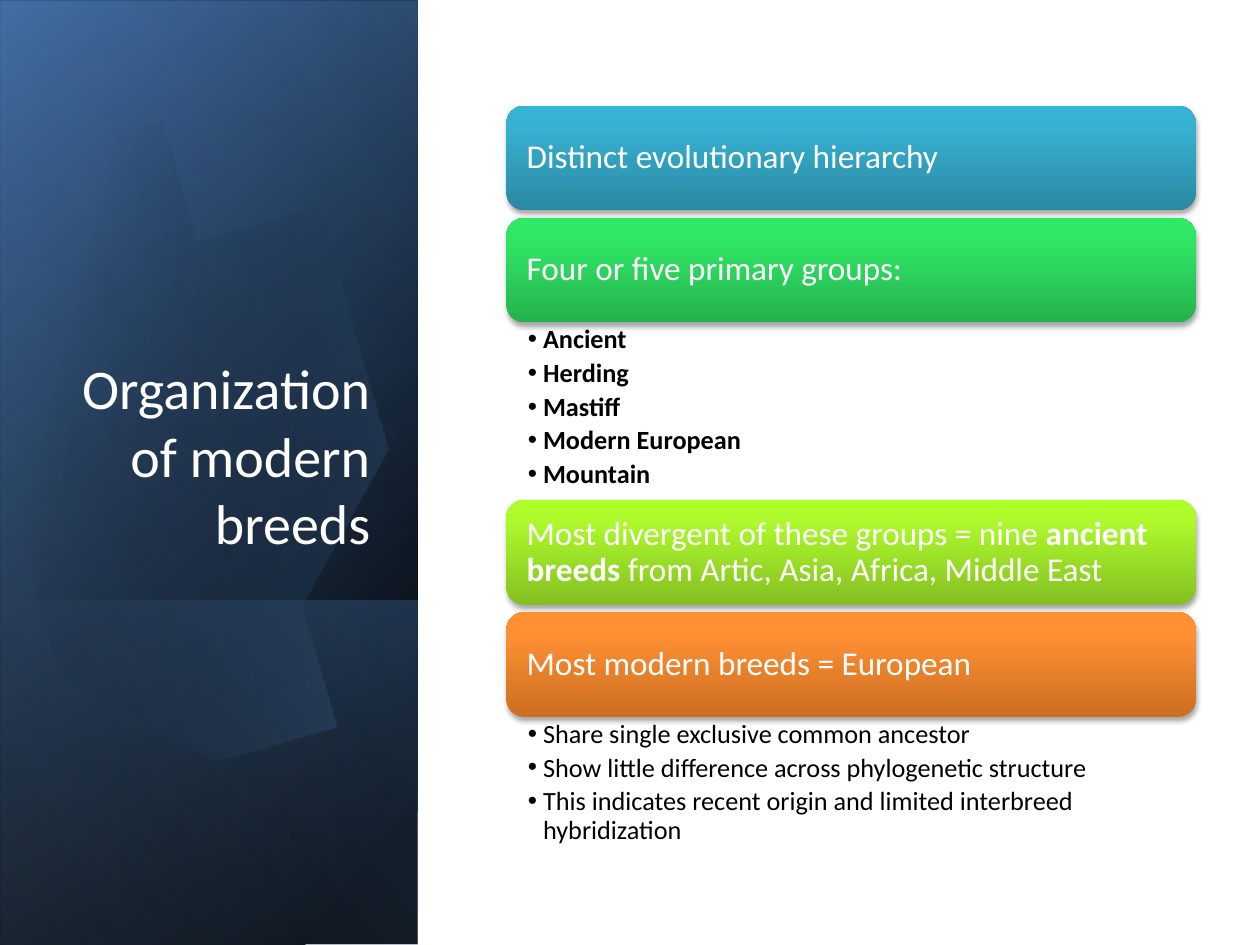
from dataclasses import dataclass
from math import cos, radians, sin

from lxml import etree
from pptx import Presentation
from pptx.dml.color import RGBColor
from pptx.enum.shapes import MSO_SHAPE
from pptx.enum.text import MSO_ANCHOR, MSO_AUTO_SIZE, PP_ALIGN
from pptx.oxml.ns import qn
from pptx.util import Inches, Pt

RECT, ROUND = MSO_SHAPE.RECTANGLE, MSO_SHAPE.ROUNDED_RECTANGLE
TOP, MIDDLE, BOTTOM = MSO_ANCHOR.TOP, MSO_ANCHOR.MIDDLE, MSO_ANCHOR.BOTTOM
LEFT, RIGHT = PP_ALIGN.LEFT, PP_ALIGN.RIGHT
NO_FIT = MSO_AUTO_SIZE.NONE


@dataclass(frozen=True)
class Theme:
    font: str = "Calibri"
    title: int = 32
    head: int = 19
    item: int = 15
    light: str = "FFFFFF"
    dark: str = "000000"
    navy: str = "376092"
    blue: str = "4F81BD"
    pale: str = "95B3D7"
    teal: tuple = ("2A88A2", "37B1D2", "34B4D6")
    green: tuple = ("25B24E", "30E765", "2DEB64")
    lime: tuple = ("85C022", "ADF92C", "AFFE28")
    orange: tuple = ("CC6E20", "FF9034", "FF9136")


def node(parent, tag, **attrs):
    return etree.SubElement(parent, qn(tag), {k: str(v) for k, v in attrs.items()})


def tint(parent, color, alpha):
    node(node(parent, "a:srgbClr", val=color), "a:alpha", val=alpha * 1000)


def shade(shape, stops, angle):
    """Fill with a gradient of (position, colour, opacity) stops, in percent."""
    shape.fill.gradient()
    grad = shape._element.spPr.find(qn("a:gradFill"))
    for child in list(grad):
        grad.remove(child)
    group = node(grad, "a:gsLst")
    for pos, color, alpha in stops:
        tint(node(group, "a:gs", pos=pos * 1000), color, alpha)
    node(grad, "a:lin", ang=angle * 60000, scaled=0)
    shape.line.fill.background()
    shape.shadow.inherit = False


def write(frame, paras, *, font, size, color, bold=False, align=LEFT,
          anchor=TOP, inset=(0.1, 0.05, 0.1, 0.05), lead=1.0, after=0, hang=0):
    """Write paragraphs, each a string or a list of (text, bold) runs."""
    frame.word_wrap = True
    frame.auto_size = NO_FIT
    frame.vertical_anchor = anchor
    (frame.margin_left, frame.margin_top,
     frame.margin_right, frame.margin_bottom) = map(Inches, inset)
    for i, text in enumerate(paras):
        para = frame.add_paragraph() if i else frame.paragraphs[0]
        para.alignment = align
        para.line_spacing = lead
        para.space_before, para.space_after = Pt(0), Pt(after)
        if hang:
            props = para._p.get_or_add_pPr()
            props.set("marL", str(Inches(hang)))
            props.set("indent", str(Inches(-hang)))
            node(props, "a:buChar", char="•")
        for part, heavy in [(text, bold)] if isinstance(text, str) else text:
            run = para.add_run()
            run.text = part
            run.font.name, run.font.size, run.font.bold = font, Pt(size), heavy
            run.font.color.rgb = RGBColor.from_string(color)


def curve(start, one, two, end, steps=24):
    """Points of a cubic curve, without its start."""
    for i in range(1, steps + 1):
        t = i / steps
        u = 1 - t
        yield tuple(u**3 * a + 3 * u * u * t * b + 3 * u * t * t * c + t**3 * d
                    for a, b, c, d in zip(start, one, two, end))


def turn(point, mid, angle):
    x, y = point[0] - mid[0], point[1] - mid[1]
    c, s = cos(radians(angle)), sin(radians(angle))
    return mid[0] + x * c - y * s, mid[1] + x * s + y * c


class Page:
    def __init__(self, deck, theme):
        self.theme = theme
        self.slide = deck.slides.add_slide(deck.slide_layouts[3])
        self.shapes = self.slide.shapes

    def add(self, kind, box):
        return self.shapes.add_shape(kind, *map(Inches, box))

    def place(self, index, box):
        """Move a placeholder into its box and in front of earlier shapes."""
        holder = self.slide.placeholders[index]
        holder.left, holder.top, holder.width, holder.height = map(Inches, box)
        self.shapes._spTree.append(holder._element)
        return holder.text_frame

    def panel(self, box, stops, angle):
        shape = self.add(RECT, box)
        shape.rotation = 90
        shape._element.spPr.find(qn("a:xfrm")).set("flipH", "1")
        shade(shape, stops, angle)

    def oval(self, start, curves, mid, tilt, stops, angle):
        """Draw a tilted outline whose points are given as they appear."""
        points = [start]
        for part in curves:
            points += curve(points[-1], *part) if len(part) == 3 else part
        points = [turn(p, mid, -tilt) for p in points]
        pen = self.shapes.build_freeform(*points[0], scale=Inches(1))
        pen.add_line_segments(points[1:], close=True)
        shape = pen.convert_to_shape()
        shape.rotation = tilt
        shade(shape, stops, angle)

    def title(self, text, box):
        look = self.theme
        write(self.place(0, box), [text], font=look.font, size=look.title,
              color=look.light, align=RIGHT, anchor=BOTTOM)

    def banner(self, text, box, colors):
        look = self.theme
        shape = self.add(ROUND, box)
        shade(shape, [(p, c, 100) for p, c in zip((0, 80, 100), colors)], 270)
        effect = shape._element.spPr.find(qn("a:effectLst"))
        drop = node(effect, "a:outerShdw", blurRad=Pt(3.1), dist=Pt(1.8),
                    dir=90 * 60000, rotWithShape=0)
        tint(drop, look.dark, 35)
        write(shape.text_frame, [text], font=look.font, size=look.head,
              color=look.light, anchor=MIDDLE, lead=0.9,
              inset=(0.12, 0.08, 0.12, 0.08))

    def items(self, index, lines, box, bold):
        look = self.theme
        write(self.place(index, box), lines, font=look.font, size=look.item,
              color=look.dark, bold=bold, lead=0.9, after=3, hang=0.12,
              inset=(0.17, 0.03, 0.15, 0.03))


def main():
    deck = Presentation()
    deck.slide_width, deck.slide_height = Inches(10), Inches(7.5)
    look = Theme()
    page = Page(deck, look)

    side = (-2.09, 2.09, 7.5, 3.31)
    page.panel(side, [(8, look.dark, 100), (100, look.navy, 100)], 50)
    page.panel((-2.09, 2.11, 7.5, 3.31),
               [(0, look.dark, 0), (99, look.blue, 46)], 30)
    page.panel((0.29, 4.48, 2.74, 3.31),
               [(2, look.blue, 29), (100, look.dark, 30)], 130)
    page.oval((0.96, 1.14), [
        ((1.71, 1.22), (2.44, 1.92), (2.73, 2.9)),
        ((3.07, 4.12), (2.62, 5.31), (1.71, 5.57)),
        ((1.14, 5.74), (0.53, 5.5), (0.07, 5)),
        [(-0.03, 4.88), (-0.25, 1.66)],
        [(-0.15, 1.54)],
        ((0.02, 1.37), (0.22, 1.25), (0.45, 1.18)),
        ((0.62, 1.13), (0.79, 1.12), (0.96, 1.14)),
    ], (1.19, 3.35), 343.9, [(29, look.dark, 0), (100, look.blue, 43)], 30)
    page.panel(side, [(0, look.dark, 0), (99, look.pale, 11)], 120)
    page.title("Organization of modern breeds", (0.48, 1.84, 2.56, 2.62))

    groups = ["Ancient", "Herding", "Mastiff", "Modern European", "Mountain"]
    traits = ["Share single exclusive common ancestor",
              "Show little difference across phylogenetic structure",
              "This indicates recent origin and limited interbreed hybridization"]
    oldest = [("Most divergent of these groups = nine ", False),
              ("ancient breeds ", True),
              ("from Artic, Asia, Africa, Middle East", False)]
    rows = [("Distinct evolutionary hierarchy", look.teal, None),
            ("Four or five primary groups:", look.green, (1, groups, 1.41, True)),
            (oldest, look.lime, None),
            ("Most modern breeds = European", look.orange, (2, traits, 1.08, False))]
    left, top, width, height, gap = 4.02, 0.84, 5.47, 0.83, 0.06
    for text, colors, part in rows:
        page.banner(text, (left, top, width, height), colors)
        top += height
        if part:
            index, lines, tall, bold = part
            page.items(index, lines, (left, top, width, tall), bold)
            top += tall
        else:
            top += gap

    deck.save("out.pptx")


if __name__ == "__main__":
    main()
